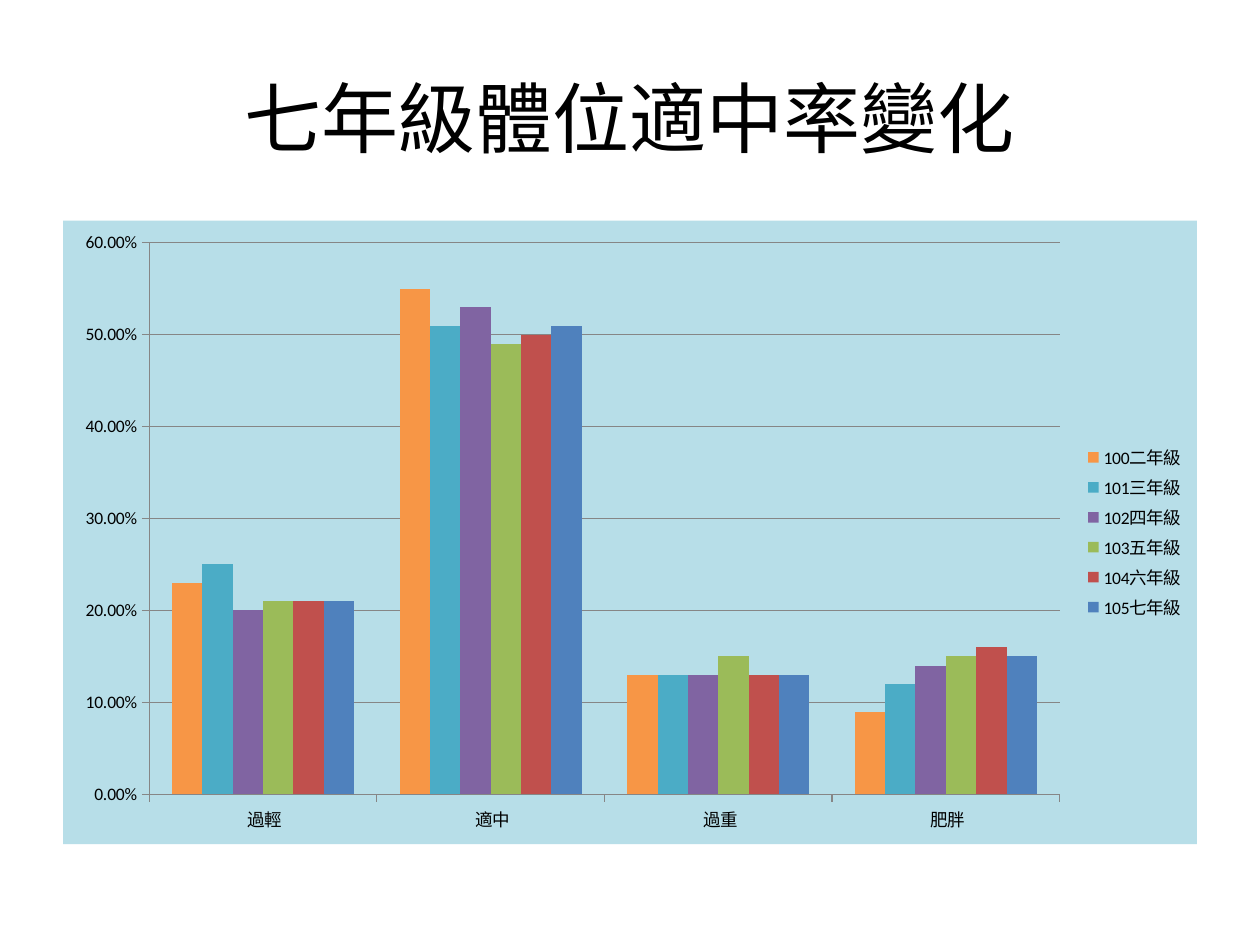
"""Build a slide with a titled column chart of weight classes by school year."""
from pptx import Presentation
from pptx.chart.data import CategoryChartData
from pptx.dml.color import RGBColor
from pptx.enum.chart import XL_CHART_TYPE, XL_LEGEND_POSITION, XL_TICK_MARK
from pptx.enum.text import MSO_ANCHOR, PP_ALIGN
from pptx.oxml import parse_xml
from pptx.oxml.ns import nsdecls
from pptx.util import Inches, Pt

COLUMN = XL_CHART_TYPE.COLUMN_CLUSTERED
RIGHT = XL_LEGEND_POSITION.RIGHT
OUTSIDE = XL_TICK_MARK.OUTSIDE
MIDDLE = MSO_ANCHOR.MIDDLE
CENTER = PP_ALIGN.CENTER

FONT = "Calibri"
BLACK = RGBColor(0x00, 0x00, 0x00)
GRAY = RGBColor(0x86, 0x86, 0x86)
PALE = RGBColor(0xB7, 0xDE, 0xE8)
ORANGE = RGBColor(0xF7, 0x96, 0x46)
TEAL = RGBColor(0x4B, 0xAC, 0xC6)
PURPLE = RGBColor(0x80, 0x64, 0xA2)
GREEN = RGBColor(0x9B, 0xBB, 0x59)
RED = RGBColor(0xC0, 0x50, 0x4D)
BLUE = RGBColor(0x4F, 0x81, 0xBD)

WIDTH, HEIGHT = Inches(10), Inches(7.5)
LEFT, SPAN = int(WIDTH * 0.05), int(WIDTH * 0.9)

CLASSES = [" 過輕", " 適中", " 過重", " 肥胖"]
YEARS = [
    ("100二年級", (0.23, 0.55, 0.13, 0.09), ORANGE),
    ("101三年級", (0.25, 0.51, 0.13, 0.12), TEAL),
    ("102四年級", (0.2, 0.53, 0.13, 0.14), PURPLE),
    ("103五年級", (0.21, 0.49, 0.15, 0.15), GREEN),
    ("104六年級", (0.21, 0.5, 0.13, 0.16), RED),
    ("105七年級", (0.21, 0.51, 0.13, 0.15), BLUE),
]


def style_font(font, size):
    """Set the common typeface and colour at the given size."""
    font.name = FONT
    font.size = Pt(size)
    font.color.rgb = BLACK


def set_title(slide, text):
    """Place and format the title."""
    title = slide.shapes.title
    title.left, title.top = LEFT, int(HEIGHT * 0.04)
    title.width, title.height = SPAN, Inches(1.25)
    frame = title.text_frame
    frame.text = text
    frame.vertical_anchor = MIDDLE
    line = frame.paragraphs[0]
    line.alignment = CENTER
    style_font(line.font, 44)


def fill_chart(chart, color):
    """Give the chart area a solid fill without a border."""
    area = parse_xml(
        f'<c:spPr {nsdecls("c", "a")}><a:solidFill><a:srgbClr val="{color}"/>'
        "</a:solidFill><a:ln><a:noFill/></a:ln></c:spPr>"
    )
    chart._chartSpace.chart.addnext(area)


def style_axes(chart):
    """Format both axes and the gridlines."""
    for axis in (chart.category_axis, chart.value_axis):
        axis.major_tick_mark = OUTSIDE
        axis.format.line.color.rgb = GRAY
    axis = chart.value_axis
    axis.minimum_scale, axis.maximum_scale = 0, 0.6
    axis.major_unit = 0.1
    axis.has_major_gridlines = True
    axis.major_gridlines.format.line.color.rgb = GRAY
    axis.tick_labels.number_format = "0.00%"
    axis.tick_labels.number_format_is_linked = False


def add_columns(slide):
    """Add the column chart with one series per year."""
    data = CategoryChartData(number_format="0.00%")
    data.categories = CLASSES
    for name, rates, _ in YEARS:
        data.add_series(name, rates)
    top, tall = Inches(1.75), int(HEIGHT * 0.66)
    chart = slide.shapes.add_chart(COLUMN, LEFT, top, SPAN, tall, data).chart
    style_font(chart.font, 10)
    chart.has_title = False
    chart.has_legend = True
    chart.legend.position = RIGHT
    chart.legend.include_in_layout = False
    fill_chart(chart, PALE)
    style_axes(chart)
    plot = chart.plots[0]
    plot.gap_width = 150
    plot.overlap = 0
    plot.vary_by_categories = False
    for series, (_, _, color) in zip(plot.series, YEARS):
        series.format.fill.solid()
        series.format.fill.fore_color.rgb = color


def main():
    """Build and save the slide."""
    deck = Presentation()
    deck.slide_width, deck.slide_height = WIDTH, HEIGHT
    slide = deck.slides.add_slide(deck.slide_layouts[5])
    set_title(slide, "七年級體位適中率變化")
    add_columns(slide)
    deck.save("out.pptx")


if __name__ == "__main__":
    main()
